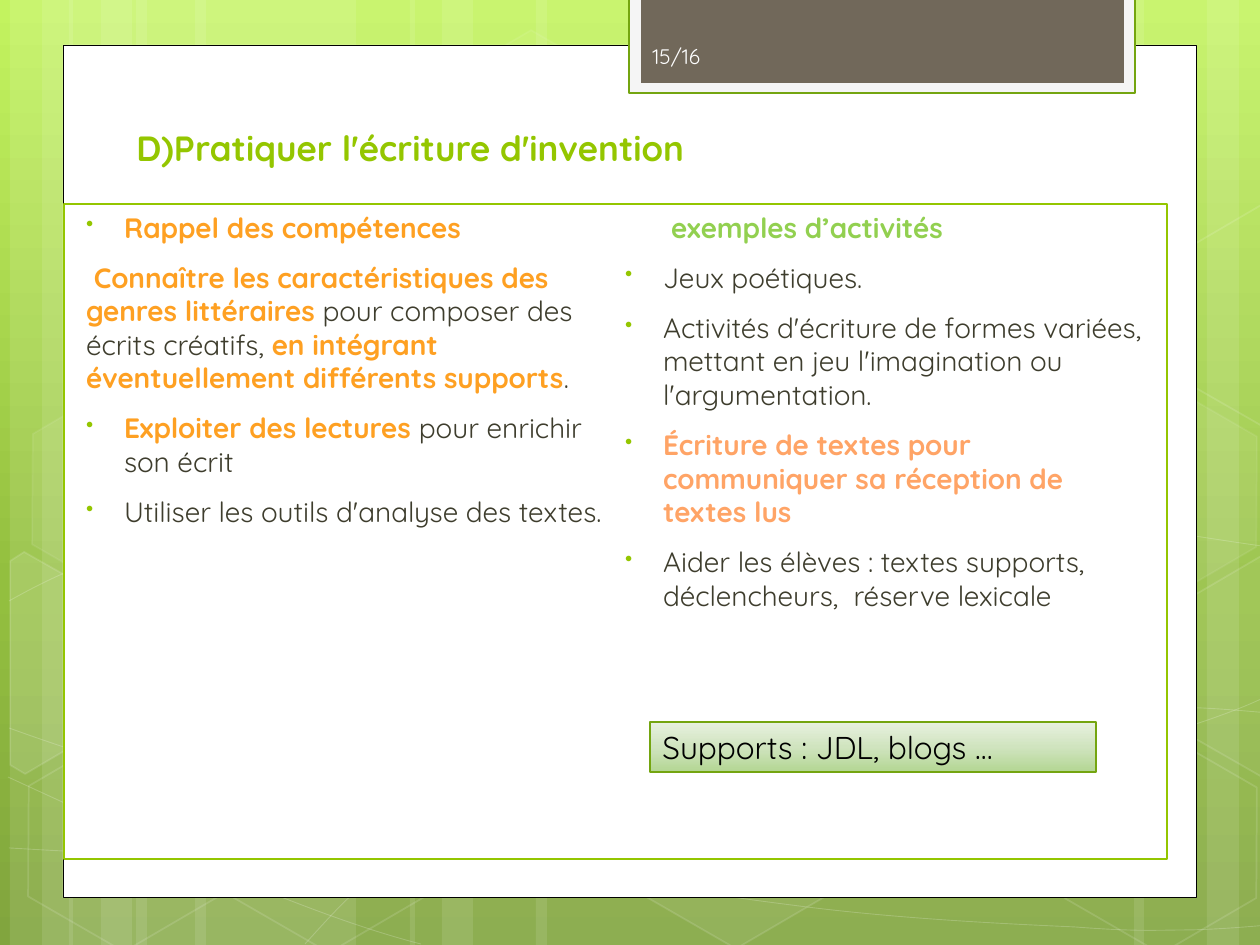
from dataclasses import dataclass
from math import cos, radians, sin

from lxml import etree
from pptx import Presentation
from pptx.dml.color import RGBColor
from pptx.enum.shapes import MSO_SHAPE
from pptx.enum.text import MSO_ANCHOR, PP_ALIGN
from pptx.oxml.ns import qn
from pptx.util import Emu, Pt

RECTANGLE, HEXAGON = MSO_SHAPE.RECTANGLE, MSO_SHAPE.HEXAGON
TOP, MIDDLE, BOTTOM = MSO_ANCHOR.TOP, MSO_ANCHOR.MIDDLE, MSO_ANCHOR.BOTTOM
LEFT = PP_ALIGN.LEFT
EMU_PER_PX = 914400 / 126
TILT = 30


@dataclass(frozen=True)
class Theme:
    """Colours, font and type sizes of the slide."""
    font: str = "Quicksand"
    white: str = "FFFFFF"
    black: str = "000000"
    accent: str = "94C600"
    border: str = "74A510"
    tab_rim: str = "F5F5F5"
    tab: str = "71685A"
    number: str = "FEFEFE"
    text: str = "3E3D2D"
    orange: str = "FEA022"
    green: str = "92D050"
    salmon: str = "FFA466"
    sky: tuple = ((0, "C3F35F"), (62, "93BF3F"), (100, "81A53E"))
    callout: tuple = ((0, "B3D693"), (50, "D0E4BF"), (100, "E8F1E0"))
    title_size: int = 20
    callout_size: int = 18
    body_size: int = 16
    number_size: int = 12
    line_height: float = 19.2
    paragraph_gap: float = 9.4


THEME = Theme()
STRIPE_FAMILIES = ((10, 220), (69, 220), (410, 388))
RIGHT_STRIPES = ((924, 220), (1207, 63), (1134, 105))
CURVES = (
    ((9, 848), (77, 852), (145, 856), (239, 854), (334, 853), (451, 851), (577, 838),
     (703, 825), (882, 801), (998, 777), (1112, 753), (1231, 716), (1269, 695)),
    ((9, 601), (45, 581), (82, 562), (152, 543), (224, 524), (326, 496), (437, 488),
     (549, 479), (685, 478), (824, 488), (963, 497), (1193, 537), (1269, 547)),
    ((8, 777), (160, 847), (311, 916), (421, 944)),
    ((9, 728), (48, 742), (88, 756), (161, 776), (234, 795), (344, 827), (450, 848),
     (554, 869), (687, 892), (791, 905), (896, 919), (1008, 924), (1075, 927),
     (1140, 932), (1158, 930), (1191, 930), (1223, 929), (1246, 927), (1269, 925)),
    ((305, 944), (328, 919), (350, 893), (381, 871), (411, 848), (454, 823), (489, 805),
     (524, 788), (546, 780), (592, 767), (638, 755), (722, 737), (766, 728),
     (811, 719), (818, 719), (857, 717), (896, 713), (958, 709), (1000, 708),
     (1045, 707), (1116, 708), (1201, 708), (1223, 709), (1245, 711), (1268, 713)),
)
HEXAGONS = ((421, 45, 4, 8), (626, 742, 6, 12), (14, 745, 0, 12), (18, 393, 7, 8),
            (219, 746, 0, 12), (949, 571, 10, 12), (1051, 747, 0, 12), (1051, 396, 7, 8))
LEFT_CUT = ((10, 561), (24, 552), (121, 607), (120, 718), (25, 774), (10, 765))
RIGHT_CUT = ((1167, 611), (1261, 556), (1271, 562), (1271, 772), (1263, 777), (1167, 722))
UPPER_RIGHT_CUT = tuple((x, y - 351) for x, y in RIGHT_CUT)
CUT_HEXAGONS = ((LEFT_CUT, (45, 674), 10), (RIGHT_CUT, (1241, 655), 4),
                (UPPER_RIGHT_CUT, (1241, 304), 0))

BULLET, PLAIN, HEADING = (48, -38, True), (10, 0, False), (56, 0, False)
SKILLS = (
    (BULLET, (("Rappel des compétences", THEME.orange, True),)),
    (PLAIN, ((" ", THEME.text, True),
             ("Connaître les caractéristiques des genres littéraires", THEME.orange, True),
             (" pour composer des écrits créatifs, ", THEME.text, False),
             ("en intégrant éventuellement différents supports", THEME.orange, True),
             (".", THEME.text, False))),
    (BULLET, (("Exploiter des lectures ", THEME.orange, True),
              ("pour enrichir son écrit", THEME.text, False))),
    (BULLET, (("Utiliser les outils d'analyse des textes.", THEME.text, False),)),
)
ACTIVITIES = (
    (HEADING, (("exemples d’activités", THEME.green, True),)),
    (BULLET, (("Jeux poétiques.", THEME.text, False),)),
    (BULLET, (("Activités d'écriture de formes variées, mettant en jeu l'imagination "
               "ou l'argumentation.", THEME.text, False),)),
    (BULLET, (("Écriture de textes pour communiquer sa réception de textes lus",
               THEME.salmon, True),)),
    (BULLET, (("Aider les élèves : textes supports, déclencheurs,  réserve lexicale",
               THEME.text, False),)),
)


def px(value):
    """Turn pixels into EMU."""
    return Emu(round(value * EMU_PER_PX))


def paint(target, color, opacity=100):
    """Fill a shape or line with a colour, or clear it when there is none."""
    if not color or not opacity:
        target.fill.background()
        return
    target.fill.solid()
    target.fill.fore_color.rgb = RGBColor.from_string(color)


def style(shape, fill=None, line=None, width=0.5, fill_opacity=100, line_opacity=100):
    """Set the fill, outline and transparency of a shape."""
    shape.shadow.inherit = False
    paint(shape, fill, fill_opacity)
    paint(shape.line, line, line_opacity)
    if line:
        shape.line.width = Pt(width)
    for query, opacity in (("p:spPr/a:solidFill/a:srgbClr", fill_opacity),
                           ("p:spPr/a:ln/a:solidFill/a:srgbClr", line_opacity)):
        for color in shape.element.xpath(query):
            if opacity < 100:
                etree.SubElement(color, qn("a:alpha"), val=str(opacity * 1000))


def set_gradient(fill, element, stops, angle):
    """Give a fill a linear gradient with any number of stops."""
    fill.gradient()
    fill.gradient_angle = angle
    stop_list = element.xpath(".//a:gsLst")[0]
    for stop in list(stop_list):
        stop_list.remove(stop)
    for position, color in stops:
        stop = etree.SubElement(stop_list, qn("a:gs"), pos=str(position * 1000))
        etree.SubElement(stop, qn("a:srgbClr"), val=color)


def add_shape(slide, kind, box, **look):
    """Add a styled preset shape."""
    shape = slide.shapes.add_shape(kind, *map(px, box))
    style(shape, **look)
    return shape


def add_outline(slide, origin, points, close, **look):
    """Add a freeform through points given relative to an origin."""
    corners = [(px(origin[0] + x), px(origin[1] + y)) for x, y in points]
    builder = slide.shapes.build_freeform(*corners[0], scale=1.0)
    builder.add_line_segments(corners[1:], close=close)
    shape = builder.convert_to_shape()
    style(shape, **look)
    return shape


def bend(shape):
    """Join each three line segments of a freeform into one cubic curve."""
    segments = shape.element.xpath(".//a:path/a:lnTo")
    for start in range(0, len(segments), 3):
        curve = etree.Element(qn("a:cubicBezTo"))
        segments[start].addprevious(curve)
        for segment in segments[start:start + 3]:
            curve.append(segment[0])
            segment.getparent().remove(segment)


def turn_back(points, center):
    """Undo the tilt of points around a centre."""
    cosine, sine = cos(radians(TILT)), sin(radians(TILT))
    offsets = [(x - center[0], y - center[1]) for x, y in points]
    return [(center[0] + x * cosine + y * sine, center[1] - x * sine + y * cosine)
            for x, y in offsets]


def format_run(run, size, color, bold=False):
    """Set the font of a run."""
    run.font.name, run.font.size, run.font.bold = THEME.font, Pt(size), bold
    run.font.color.rgb = RGBColor.from_string(color)


def write_line(shape, text, size, color, anchor, bold=False):
    """Write one left-aligned line into a shape."""
    frame = shape.text_frame
    frame.text = text
    frame.word_wrap, frame.vertical_anchor = True, anchor
    frame.paragraphs[0].alignment = LEFT
    format_run(frame.paragraphs[0].runs[0], size, color, bold)


def add_backdrop(slide, box):
    """Draw the gradient, stripes, curves and hexagons behind the page."""
    left, top, _, height = box
    set_gradient(slide.background.fill, slide.element, THEME.sky, 270)
    stripes = [stripe for start, wide in STRIPE_FAMILIES
               for stripe in ((start + 126, wide), (start, 63), (start + 32, 105))]
    for x, width in (*stripes, *RIGHT_STRIPES):
        add_shape(slide, RECTANGLE, (left + x, top, width, height),
                  fill=THEME.white, fill_opacity=10)
    for points in CURVES:
        bend(add_outline(slide, (left, top), points, False, line=THEME.white, line_opacity=20))
    for x, y, fill_opacity, line_opacity in HEXAGONS:
        hexagon = add_shape(slide, HEXAGON, (left + x, top + y, 220, 192), fill=THEME.white,
                            line=THEME.white, width=1, fill_opacity=fill_opacity,
                            line_opacity=line_opacity)
        hexagon.adjustments[0] = 0.285
        hexagon.rotation = TILT
    for points, center, fill_opacity in CUT_HEXAGONS:
        hexagon = add_outline(slide, (left, top), turn_back(points, center), True,
                              fill=THEME.white, line=THEME.white, width=1,
                              fill_opacity=fill_opacity, line_opacity=12)
        hexagon.rotation = TILT


def add_page_tab(slide, box):
    """Draw the tab with the page number."""
    left, top, width, height = box
    add_shape(slide, RECTANGLE, box, fill=THEME.tab_rim, line=THEME.border, width=1.25)
    add_shape(slide, RECTANGLE, (left + 12, top, width - 23, height - 10), fill=THEME.tab)
    number = slide.shapes.add_textbox(*map(px, (left + 11, top + 34, 184, 50)))
    write_line(number, "15/16", THEME.number_size, THEME.number, MIDDLE)


def add_title(slide, box):
    """Write the slide title."""
    title = slide.shapes.add_textbox(*map(px, box))
    write_line(title, "D)Pratiquer l'écriture d'invention", THEME.title_size,
               THEME.accent, BOTTOM, True)


def format_paragraph(paragraph, layout):
    """Set the spacing, indents and bullet of a body paragraph."""
    margin, indent, bulleted = layout
    paragraph.alignment = LEFT
    paragraph.line_spacing = Pt(THEME.line_height)
    paragraph.space_after = Pt(THEME.paragraph_gap)
    properties = paragraph._p.get_or_add_pPr()
    properties.set("marL", str(px(margin)))
    properties.set("indent", str(px(indent)))
    if bulleted:
        color = etree.SubElement(properties, qn("a:buClr"))
        etree.SubElement(color, qn("a:srgbClr"), val=THEME.accent)
        etree.SubElement(properties, qn("a:buSzPct"), val="76000")
        etree.SubElement(properties, qn("a:buChar"), char="•")


def write_column(shape, content, left_margin, right_margin):
    """Write body paragraphs between the side margins of a shape."""
    frame = shape.text_frame
    frame.word_wrap, frame.vertical_anchor = True, TOP
    frame.margin_left, frame.margin_right = px(left_margin), px(right_margin)
    for index, (layout, pieces) in enumerate(content):
        paragraph = frame.add_paragraph() if index else frame.paragraphs[0]
        format_paragraph(paragraph, layout)
        for text, color, bold in pieces:
            run = paragraph.add_run()
            run.text = text
            format_run(run, THEME.body_size, color, bold)


def add_body(slide, box):
    """Draw the framed body with its two equal columns."""
    left, top, width, height = box
    inset, half = 12, width // 2
    frame = add_shape(slide, RECTANGLE, box, line=THEME.accent, width=0.75)
    write_column(frame, SKILLS, inset, half)
    second = slide.shapes.add_textbox(*map(px, (left + half, top, half, height)))
    write_column(second, ACTIVITIES, 0, inset)


def add_callout(slide, box):
    """Draw the gradient box that names the media."""
    callout = add_shape(slide, RECTANGLE, box, line=THEME.border, width=0.75)
    set_gradient(callout.fill, callout.element, THEME.callout, 90)
    write_line(callout, "Supports : JDL, blogs …", THEME.callout_size, THEME.black, TOP)


def main():
    """Build and save the slide."""
    presentation = Presentation()
    presentation.slide_width, presentation.slide_height = px(1260), px(945)
    slide = presentation.slides.add_slide(presentation.slide_layouts[6])
    add_backdrop(slide, (0, 0, 1260, 945))
    add_shape(slide, RECTANGLE, (63, 45, 1134, 853), fill=THEME.white, line=THEME.black)
    add_page_tab(slide, (629, -3, 506, 96))
    add_title(slide, (124, 106, 968, 69))
    add_body(slide, (64, 204, 1103, 655))
    add_callout(slide, (650, 722, 446, 50))
    presentation.save("out.pptx")


if __name__ == "__main__":
    main()
